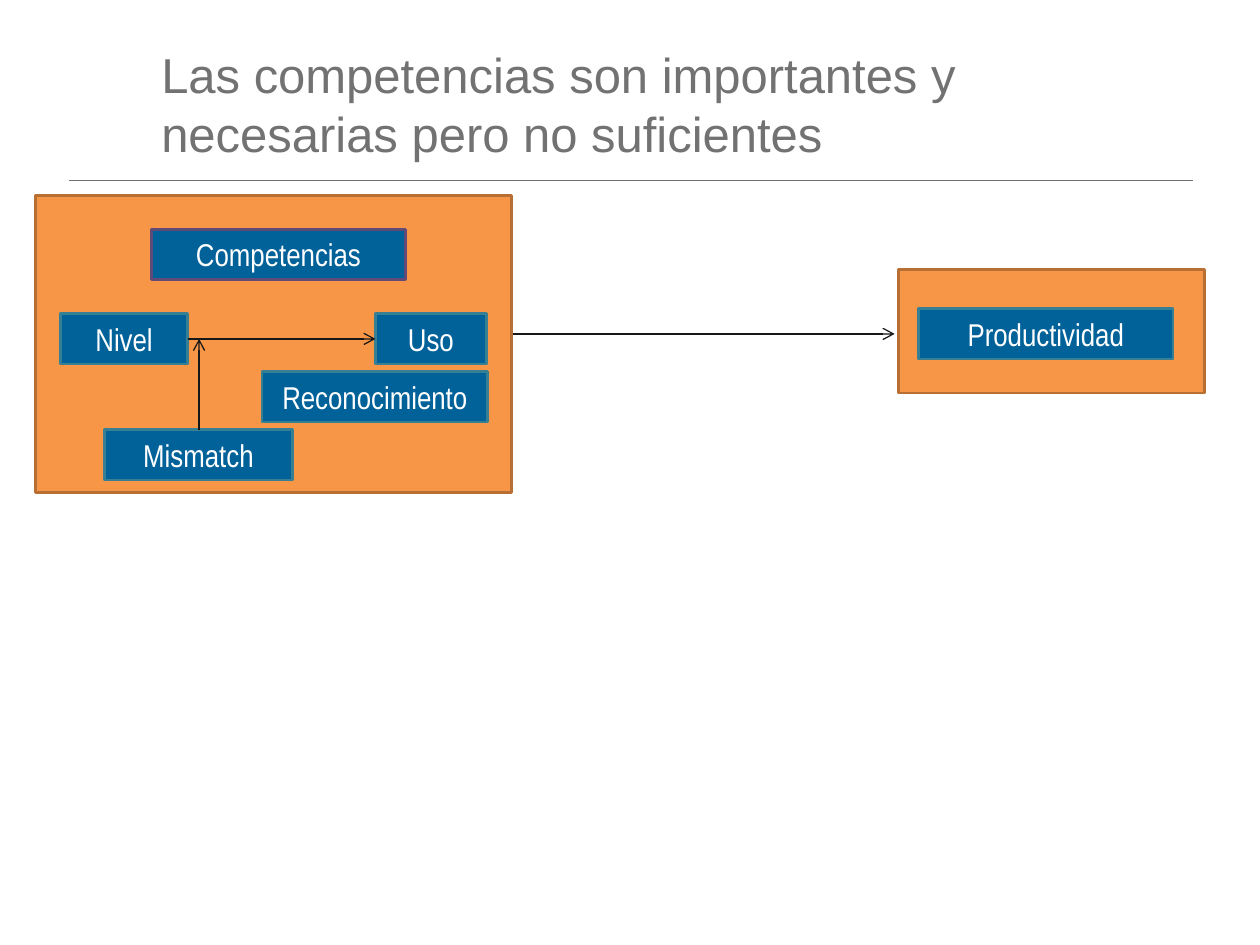
from lxml import etree
from pptx import Presentation
from pptx.dml.color import RGBColor
from pptx.enum import shapes, text
from pptx.oxml import ns
from pptx.util import Inches, Pt

ORANGE, BROWN = "F79646", "B76F34"
BLUE, TEAL, PURPLE = "006299", "377F92", "5F4A78"
GREY, BLACK, WHITE = "727272", "171717", "FFFFFF"
LABEL_HEIGHT = 0.4


def colour(hex_string):
    return RGBColor.from_string(hex_string)


def add_box(slide, left, top, width, height, fill, outline):
    box = slide.shapes.add_shape(
        shapes.MSO_SHAPE.RECTANGLE,
        Inches(left), Inches(top), Inches(width), Inches(height))
    box.shadow.inherit = False
    box.fill.solid()
    box.fill.fore_color.rgb = colour(fill)
    box.line.color.rgb = colour(outline)
    box.line.width = Pt(1.5)
    return box


def add_label(slide, wording, left, top, width, outline=TEAL):
    label = add_box(slide, left, top, width, LABEL_HEIGHT, BLUE, outline)
    frame = label.text_frame
    frame.text = wording
    frame.word_wrap = True
    frame.vertical_anchor = text.MSO_ANCHOR.TOP
    frame.auto_size = text.MSO_AUTO_SIZE.SHAPE_TO_FIT_TEXT
    paragraph = frame.paragraphs[0]
    paragraph.alignment = text.PP_ALIGN.CENTER
    font = paragraph.runs[0].font
    font.name = "Arial Narrow"
    font.size = Pt(18)
    font.color.rgb = colour(WHITE)


def add_line(slide, start, end, stroke=BLACK, weight=0.75, arrow=True):
    line = slide.shapes.add_connector(
        shapes.MSO_CONNECTOR.STRAIGHT,
        Inches(start[0]), Inches(start[1]), Inches(end[0]), Inches(end[1]))
    line.line.color.rgb = colour(stroke)
    line.line.width = Pt(weight)
    properties = line._element.spPr
    if arrow:
        etree.SubElement(properties.find(ns.qn("a:ln")), ns.qn("a:tailEnd"), type="arrow")
    etree.SubElement(properties, ns.qn("a:effectLst"))


def add_heading(slide, left, top, width, height):
    title = slide.shapes.title
    title.left, title.top = Inches(left), Inches(top)
    title.width, title.height = Inches(width), Inches(height)
    frame = title.text_frame
    frame.text = "Las competencias son importantes y necesarias pero no suficientes"
    frame.word_wrap = True
    frame.auto_size = text.MSO_AUTO_SIZE.NONE
    frame.vertical_anchor = text.MSO_ANCHOR.MIDDLE
    paragraph = frame.paragraphs[0]
    paragraph.alignment = text.PP_ALIGN.LEFT
    font = paragraph.runs[0].font
    font.name = "Arial"
    font.size = Pt(28)
    font.color.rgb = colour(GREY)
    add_line(slide, (0.55, 1.43), (9.47, 1.43), GREY, 0.5, arrow=False)


def add_productivity(slide, left, top, width, height):
    add_box(slide, left, top, width, height, ORANGE, BROWN)
    add_label(slide, "Productividad", left + 0.16, top + 0.31, 2.02)


def add_skills(slide, left, top, width, height):
    add_box(slide, left, top, width, height, ORANGE, BROWN)
    level_left, level_width, use_left = left + 0.2, 1.01, left + 2.7
    level_top, mismatch_top = top + 0.94, top + 1.86
    flow_y = level_top + LABEL_HEIGHT / 2
    mismatch_x = left + 1.3
    add_label(slide, "Competencias", left + 0.92, top + 0.27, 2.02, PURPLE)
    add_label(slide, "Nivel", level_left, level_top, level_width)
    add_label(slide, "Uso", use_left, level_top, 0.88)
    add_label(slide, "Mismatch", left + 0.55, mismatch_top, 1.49)
    add_line(slide, (level_left + level_width, flow_y), (use_left, flow_y))
    add_line(slide, (mismatch_x, mismatch_top), (mismatch_x, flow_y))
    add_label(slide, "Reconocimiento", left + 1.8, (level_top + mismatch_top) / 2, 1.79)


def main():
    presentation = Presentation()
    presentation.slide_width, presentation.slide_height = Inches(10), Inches(7.5)
    slide = presentation.slides.add_slide(presentation.slide_layouts[5])
    add_heading(slide, 1.18, 0.26, 8.11, 1.12)
    add_productivity(slide, 7.13, 2.14, 2.43, 0.98)
    add_line(slide, (4.06, 2.65), (7.1, 2.65))
    add_skills(slide, 0.28, 1.55, 3.78, 2.36)
    presentation.save("out.pptx")


if __name__ == "__main__":
    main()
